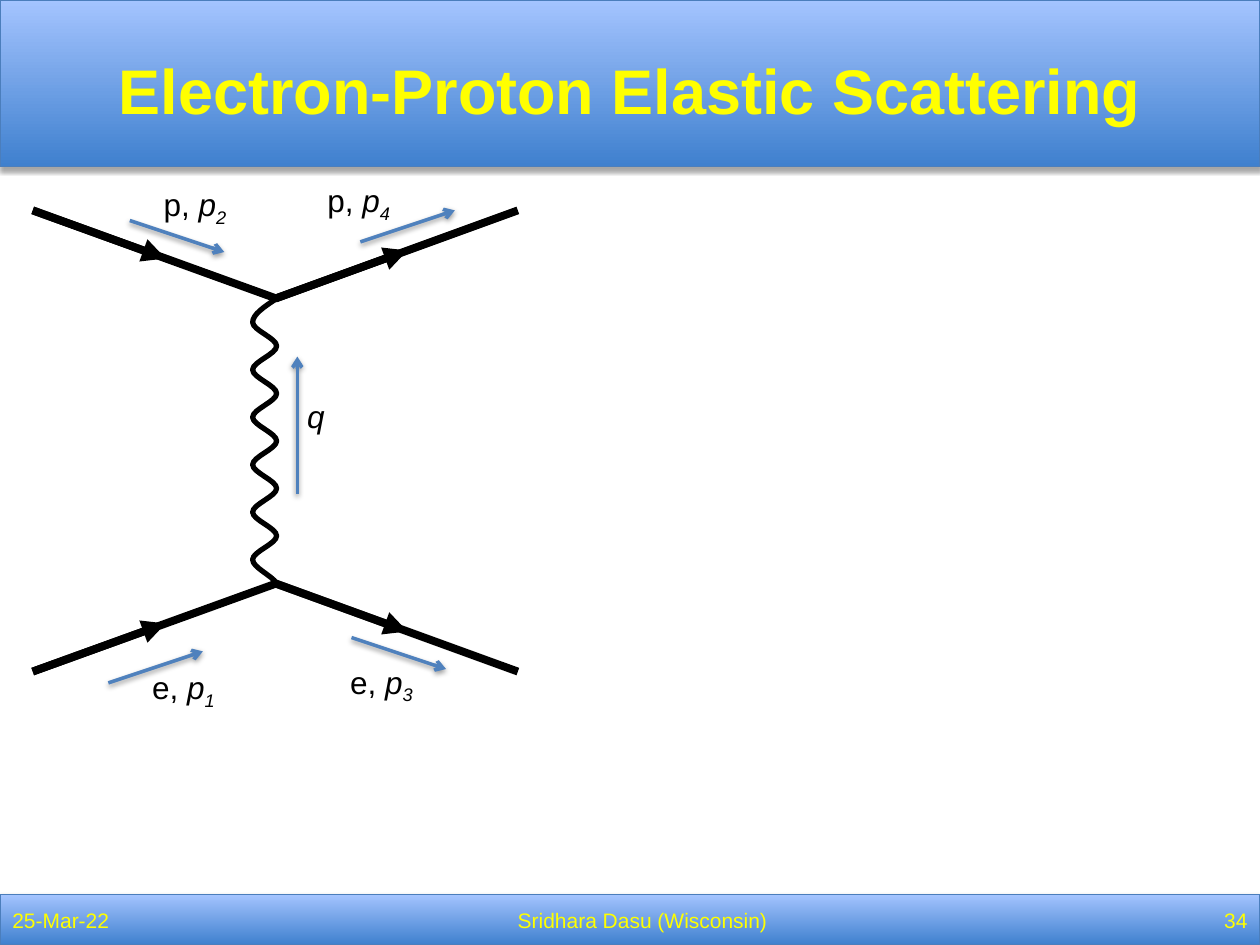
import itertools
from dataclasses import dataclass

import pptx
import pptx.dml.color
import pptx.enum.shapes
import pptx.enum.text
import pptx.oxml
import pptx.oxml.ns
import pptx.util
from pptx.util import Inches

ALIGN = pptx.enum.text.PP_ALIGN
ANCHOR = pptx.enum.text.MSO_ANCHOR
NS = pptx.oxml.ns.nsdecls("a")


@dataclass(frozen=True)
class Theme:
    """Colours, font and sizes shared by the slide."""
    font: str = "Arial"
    text: str = "000000"
    accent: str = "4F81BD"
    band_text: str = "FFFF00"
    band_line: str = "4B7EBC"
    band_bottom: str = "3F80CE"
    band_top: str = "A4C4FF"
    title_size: float = 36
    label_size: float = 18
    footer_size: float = 12
    fermion_width: float = 4.5
    photon_width: float = 3
    momentum_width: float = 2


THEME = Theme()


def rgb(value):
    """Return a colour from its hex digits."""
    return pptx.dml.color.RGBColor.from_string(value)


def set_shadow(sp, alpha=0, distance=0):
    """Give a shape a soft shadow below it, or none when alpha is zero."""
    shadow = (
        f'<a:outerShdw blurRad="{pptx.util.Pt(3.1)}" dist="{pptx.util.Pt(distance)}" '
        f'dir="5400000" rotWithShape="0"><a:srgbClr val="000000">'
        f'<a:alpha val="{alpha * 1000}"/></a:srgbClr></a:outerShdw>'
    ) if alpha else ""
    effects = pptx.oxml.parse_xml(f"<a:effectLst {NS}>{shadow}</a:effectLst>")
    sp._element.spPr.append(effects)


def add_text(slide, box, parts, size, color, align=ALIGN.LEFT,
             anchor=ANCHOR.TOP, bold=False):
    """Add one line of text from (text, italic, subscript) parts."""
    tf = slide.shapes.add_textbox(*map(Inches, box)).text_frame
    tf.word_wrap = True
    tf.vertical_anchor = anchor
    p = tf.paragraphs[0]
    p.alignment = align
    p.font.name = THEME.font
    p.font.size = pptx.util.Pt(size)
    p.font.bold = bold
    p.font.color.rgb = rgb(color)
    for text, italic, subscript in parts:
        r = p.add_run()
        r.text = text
        if italic:
            r.font.italic = True
        if subscript:
            r._r.get_or_add_rPr().set("baseline", "-25000")


def add_line(slide, start, end, color, width, head=None):
    """Add a straight line with an optional arrowhead at its end."""
    kind = pptx.enum.shapes.MSO_CONNECTOR.STRAIGHT
    line = slide.shapes.add_connector(kind, *map(Inches, (*start, *end)))
    line.line.color.rgb = rgb(color)
    line.line.width = pptx.util.Pt(width)
    if head:
        line.line._get_or_add_ln().append(
            pptx.oxml.parse_xml(f'<a:tailEnd {NS} type="{head}"/>'))
    return line


def add_band(slide, box):
    """Add a gradient band with a shadow."""
    kind = pptx.enum.shapes.MSO_SHAPE.RECTANGLE
    sp = slide.shapes.add_shape(kind, *map(Inches, box))
    sp.fill.gradient()
    sp.fill.gradient_angle = 90
    for stop, color in zip(sp.fill.gradient_stops,
                           (THEME.band_bottom, THEME.band_top)):
        stop.color.rgb = rgb(color)
    sp.line.color.rgb = rgb(THEME.band_line)
    sp.line.width = pptx.util.Pt(0.75)
    set_shadow(sp, 35, 1.8)


def add_header(slide, box, title):
    """Add the title band."""
    x, y, w, _ = box
    add_band(slide, box)
    add_text(slide, (x + 0.5, y + 0.08, w - 1, 1.25), [(title, False, False)],
             THEME.title_size, THEME.band_text, ALIGN.CENTER, ANCHOR.MIDDLE, True)


def add_footer(slide, box, texts):
    """Add the footer band with date, author and slide number."""
    x, y, w, h = box
    add_band(slide, box)
    edges = (0, 1.37, 8.83, w)
    aligns = (ALIGN.LEFT, ALIGN.CENTER, ALIGN.RIGHT)
    for text, left, right, align in zip(texts, edges, edges[1:], aligns):
        add_text(slide, (x + left, y, right - left, h), [(text, False, False)],
                 THEME.footer_size, THEME.band_text, align, ANCHOR.MIDDLE)


def add_fermion(slide, start, end):
    """Add a particle line with an arrowhead just past its middle."""
    middle = [a + 0.545 * (b - a) for a, b in zip(start, end)]
    for target, head in ((middle, "triangle"), (end, None)):
        line = add_line(slide, start, target, THEME.text,
                        THEME.fermion_width, head)
        set_shadow(line)


def add_photon(slide, box, cycles=6):
    """Add a vertical wave of curves that starts and ends at the right of its box."""
    x, y, w, h = box
    count = 2 * cycles
    points = [(Inches(x + w * (1 - i % 2)), Inches(y + h * i / count))
              for i in range(count + 1)]
    builder = slide.shapes.build_freeform(*points[0], scale=1)
    builder.add_line_segments(points[1:], close=False)
    sp = builder.convert_to_shape()
    segments = sp._element.xpath(".//a:lnTo")
    local = [(px - sp.left, py - sp.top) for px, py in points]
    for i, (segment, (start, end)) in enumerate(
            zip(segments, itertools.pairwise(local))):
        (x0, y0), (x1, y1) = start, end
        bend_in = 0.5 if i == 0 else 0
        bend_out = 0.2 if i == count - 1 else 0
        controls = ((x0 + bend_in * (x1 - x0), y0 + (y1 - y0) / 3),
                    (x1 - bend_out * (x1 - x0), y1 - (y1 - y0) / 3), end)
        pts = "".join(f'<a:pt x="{round(px)}" y="{round(py)}"/>'
                      for px, py in controls)
        curve = pptx.oxml.parse_xml(f"<a:cubicBezTo {NS}>{pts}</a:cubicBezTo>")
        segment.getparent().replace(segment, curve)
    sp.fill.background()
    sp.line.color.rgb = rgb(THEME.text)
    sp.line.width = pptx.util.Pt(THEME.photon_width)
    sp.shadow.inherit = False


def add_momentum(slide, start, step):
    """Add a momentum arrow given its start and extent."""
    end = [a + d for a, d in zip(start, step)]
    line = add_line(slide, start, end, THEME.accent,
                    THEME.momentum_width, "arrow")
    set_shadow(line, 38, 1.6)


def add_diagram(slide, box):
    """Add the scattering diagram with its momenta and labels."""
    x, y, w, h = box
    center, rise = x + w / 2, 0.7
    for outer, vertex in ((y, y + rise), (y + h, y + h - rise)):
        add_fermion(slide, (x, outer), (center + 0.01, vertex))
        add_fermion(slide, (center, vertex), (x + w, outer))
    add_photon(slide, (center - 0.18, y + rise, 0.19, h - 2 * rise))

    up, down = (0.75, -0.25), (0.75, 0.25)
    momenta = (
        ((0.6, 3.75), up, (0.85, 3.58), "e", "1"),
        ((0.77, 0.08), down, (0.94, -0.25), "p", "2"),
        ((2.53, 3.39), down, (2.42, 3.54), "e", "3"),
        ((2.6, 0.25), up, (2.24, -0.28), "p", "4"),
        ((2.1, 2.25), (0, -1.09), (2.08, 1.43), None, None),
    )
    for (ax, ay), step, (lx, ly), particle, index in momenta:
        add_momentum(slide, (x + ax, y + ay), step)
        parts = [(f"{particle}, ", False, False), ("p", True, False),
                 (index, True, True)] if particle else [("q", True, False)]
        add_text(slide, (x + lx, y + ly, 0.86, 0.4), parts,
                 THEME.label_size, THEME.text)


def main():
    """Build and save the slide."""
    prs = pptx.Presentation()
    prs.slide_width, prs.slide_height = Inches(10), Inches(7.5)
    slide = prs.slides.add_slide(prs.slide_layouts[6])
    add_footer(slide, (0, 7.1, 10, 0.4),
               ("25-Mar-22", "Sridhara Dasu (Wisconsin)", "34"))
    add_header(slide, (0, 0, 10, 1.32), "Electron-Proton Elastic Scattering")
    add_diagram(slide, (0.26, 1.67, 3.85, 3.66))
    prs.save("out.pptx")


if __name__ == "__main__":
    main()
